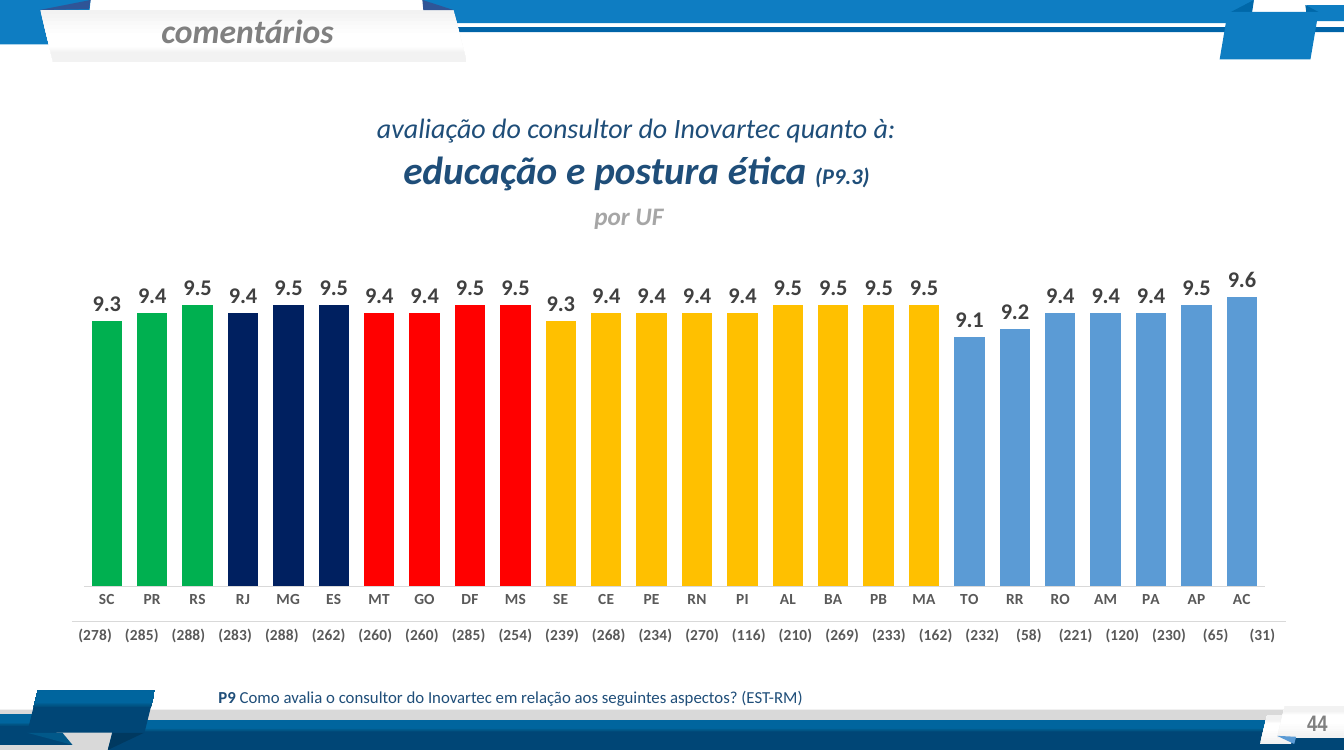
from dataclasses import dataclass

from lxml.etree import SubElement
from pptx import Presentation
from pptx.chart.chart import Chart
from pptx.chart.data import CategoryChartData
from pptx.dml.color import RGBColor
from pptx.enum.chart import XL_CHART_TYPE, XL_LABEL_POSITION, XL_TICK_MARK
from pptx.enum.shapes import MSO_SHAPE
from pptx.enum.text import MSO_ANCHOR, PP_ALIGN
from pptx.oxml import parse_xml
from pptx.oxml.ns import nsdecls, qn
from pptx.shapes.autoshape import Shape
from pptx.slide import Slide
from pptx.util import Pt

FONT = "Calibri"
SKY = RGBColor(0x0E, 0x7D, 0xC2)
STRIPE_BLUE = RGBColor(0x00, 0x64, 0xA8)
FOLD_BLUE = RGBColor(0x2F, 0x55, 0x97)
BADGE_FOLD = RGBColor(0x00, 0x68, 0xA9)
DEEP = RGBColor(0x00, 0x46, 0x76)
DEEP_MID = RGBColor(0x00, 0x55, 0x85)
DEEP_LIGHT = RGBColor(0x00, 0x65, 0x9E)
RIBBON_SHADE = RGBColor(0x00, 0x39, 0x60)
RIBBON_FOLD = RGBColor(0x01, 0x58, 0x89)
WHITE = RGBColor(0xFF, 0xFF, 0xFF)
PAPER = RGBColor(0xF2, 0xF2, 0xF2)
LIGHT_GREY = RGBColor(0xD9, 0xD9, 0xD9)
MID_GREY = RGBColor(0xA6, 0xA6, 0xA6)
GREY = RGBColor(0x80, 0x80, 0x80)
AXIS_GREY = RGBColor(0x59, 0x59, 0x59)
LABEL_GREY = RGBColor(0x40, 0x40, 0x40)
NAVY = RGBColor(0x1F, 0x4E, 0x79)
GREEN = RGBColor(0x00, 0xB0, 0x50)
INDIGO = RGBColor(0x00, 0x20, 0x60)
RED = RGBColor(0xFF, 0x00, 0x00)
AMBER = RGBColor(0xFF, 0xC0, 0x00)
LIGHT_BLUE = RGBColor(0x5B, 0x9B, 0xD5)

Stops = tuple[tuple[int, RGBColor], ...]
PAPER_SHEEN: Stops = ((0, PAPER), (50, WHITE), (68, WHITE), (83, PAPER))
DEEP_SHEEN: Stops = ((0, DEEP), (59, DEEP), (65, DEEP_MID), (72, DEEP_LIGHT))


@dataclass(frozen=True)
class Band:
    box: tuple[float, float, float, float]
    fill: RGBColor | Stops
    slant: float | None = 0.25  # None gives a rectangle
    inverted: bool = False


@dataclass(frozen=True)
class Fold:
    corners: tuple[tuple[float, float], ...]
    fill: RGBColor | Stops


@dataclass(frozen=True)
class Words:
    text: str
    size: float
    color: RGBColor
    bold: bool = False
    italic: bool = False
    font: str = FONT


@dataclass(frozen=True)
class Caption:
    box: tuple[float, float, float, float]
    words: tuple[Words, ...]
    align: PP_ALIGN = PP_ALIGN.CENTER
    line_spacing: float = 1.0


@dataclass(frozen=True)
class State:
    code: str
    score: float
    sample: int
    index: int


@dataclass(frozen=True)
class Region:
    color: RGBColor
    states: tuple[State, ...]


FRAME = (
    Fold(((317.5, 16.5), (301.7, 0), (895, 0), (892.8, 16.5)), SKY),
    Band((312.5, 19.4, 718.6, 3.6), STRIPE_BLUE, inverted=True),
    Band((-5, -1.4, 69.8, 33.1), SKY, slant=0.09),
    Band((28.8, 7.2, 304.6, 37.4), PAPER_SHEEN, inverted=True),
    Fold(((28.1, 7.2), (64.8, 0), (63.4, 6.5)), FOLD_BLUE),
    Band((-35.3, 506.9, 1011.6, 28.8), LIGHT_GREY, slant=None),
    Band((77, 514.1, 905.8, 21.6), DEEP_SHEEN),
    Fold(((51.8, 532.1), (23, 509.8), (-18, 509.8), (-13, 532.1)), DEEP_SHEEN),
    Fold(((77, 535.7), (103, 523.4), (80.6, 523.4)), RIBBON_SHADE),
    Fold(((51.8, 532.1), (19.4, 523.4), (44.6, 523.4)), RIBBON_FOLD),
    Band((19.4, 493.2, 91.4, 30.2), DEEP_SHEEN),
    Band((900, 510.5, 27.4, 20.9), PAPER_SHEEN),
    Band((912.2, 504, 54.7, 23), PAPER_SHEEN),
    Fold(((912.2, 525.6), (924.5, 531.4), (925.9, 526.3)), LIGHT_BLUE),
    Fold(((324, 7.2), (301.7, 0), (302.4, 7.2)), FOLD_BLUE),
    Fold(((894.2, 10.1), (877.7, 9.4), (895.7, 0)), BADGE_FOLD),
    Band((933.1, 3.6, 30.2, 11.5), SKY, slant=0.17, inverted=True),
    Fold(((933.1, 8.6), (941.8, 8.6), (932.4, 3.6)), BADGE_FOLD),
    Band((871.2, 8.6, 70.6, 33.8), SKY, slant=0.17),
)

CAPTIONS = (
    Caption((739.4, 501.8, 216, 28.8), (Words("44", 16, GREY, bold=True, font="Arial Narrow"),),
            PP_ALIGN.RIGHT),
    Caption((43.2, 7.9, 267.1, 30.2), (Words("comentários", 24, GREY, True, True),), line_spacing=0.9),
    Caption((149, 486, 585.4, 23), (
        Words("P9", 12, NAVY, bold=True),
        Words(" Como avalia o consultor do Inovartec em relação aos seguintes aspectos? (EST-RM)", 12, NAVY),
    ), PP_ALIGN.LEFT),
    Caption((311, 139.7, 276.5, 28.8), (Words("por UF", 18, MID_GREY, True, True),)),
    Caption((257, 74.9, 395.3, 31.7),
            (Words("avaliação do consultor do Inovartec quanto à:", 20, NAVY, italic=True),)),
    Caption((257, 100.1, 395.3, 41), (
        Words("educação e postura ética ", 28, NAVY, True, True),
        Words("(P9.3)", 16, NAVY, True, True),
    )),
)

REGIONS = (
    Region(GREEN, (State("SC", 9.3, 278, 97), State("PR", 9.4, 285, 98), State("RS", 9.5, 288, 98))),
    Region(INDIGO, (State("RJ", 9.4, 283, 98), State("MG", 9.5, 288, 99), State("ES", 9.5, 262, 99))),
    Region(RED, (State("MT", 9.4, 260, 98), State("GO", 9.4, 260, 98),
                 State("DF", 9.5, 285, 99), State("MS", 9.5, 254, 99))),
    Region(AMBER, (State("SE", 9.3, 239, 97), State("CE", 9.4, 268, 98), State("PE", 9.4, 234, 98),
                   State("RN", 9.4, 270, 98), State("PI", 9.4, 116, 98), State("AL", 9.5, 210, 98),
                   State("BA", 9.5, 269, 99), State("PB", 9.5, 233, 99), State("MA", 9.5, 162, 99))),
    Region(LIGHT_BLUE, (State("TO", 9.1, 232, 95), State("RR", 9.2, 58, 96), State("RO", 9.4, 221, 97),
                        State("AM", 9.4, 120, 98), State("PA", 9.4, 230, 98), State("AP", 9.5, 65, 99),
                        State("AC", 9.6, 31, 100))),
)
STATES = [state for region in REGIONS for state in region.states]
STATE_COLORS = [region.color for region in REGIONS for _ in region.states]


def paint(shape: Shape, fill: RGBColor | Stops) -> None:
    """Fill with one colour, or with gradient stops that run from bottom to top."""
    shape.shadow.inherit = False
    shape.line.fill.background()
    if isinstance(fill, RGBColor):
        shape.fill.solid()
        shape.fill.fore_color.rgb = fill
        return
    shape.fill.gradient()
    shape.fill.gradient_angle = 90
    stop_list = shape._element.spPr.find(qn("a:gradFill")).find(qn("a:gsLst"))
    for default_stop in list(stop_list):
        stop_list.remove(default_stop)
    for percent, color in fill:
        stop = SubElement(stop_list, qn("a:gs"), pos=str(percent * 1000))
        SubElement(stop, qn("a:srgbClr"), val=str(color))


def draw_band(slide: Slide, band: Band) -> None:
    preset = MSO_SHAPE.RECTANGLE if band.slant is None else MSO_SHAPE.PARALLELOGRAM
    shape = slide.shapes.add_shape(preset, *map(Pt, band.box))
    if band.slant is not None:
        shape.adjustments[0] = band.slant
    if band.inverted:
        shape.rotation = 180
        shape._element.spPr.find(qn("a:xfrm")).set("flipH", "1")
    paint(shape, band.fill)


def draw_fold(slide: Slide, fold: Fold) -> None:
    start, *others = [(Pt(x), Pt(y)) for x, y in fold.corners]
    builder = slide.shapes.build_freeform(*start)
    builder.add_line_segments(others, close=True)
    paint(builder.convert_to_shape(), fold.fill)


def draw_caption(slide: Slide, caption: Caption) -> None:
    frame = slide.shapes.add_textbox(*map(Pt, caption.box)).text_frame
    frame.word_wrap = True
    frame.vertical_anchor = MSO_ANCHOR.MIDDLE
    paragraph = frame.paragraphs[0]
    paragraph.alignment = caption.align
    paragraph.line_spacing = caption.line_spacing
    for words in caption.words:
        run = paragraph.add_run()
        run.text = words.text
        run.font.name, run.font.size = words.font, Pt(words.size)
        run.font.bold, run.font.italic = words.bold, words.italic
        run.font.color.rgb = words.color


def draw_columns(slide: Slide, box: tuple[float, ...], plot_box: tuple[float, ...],
                 categories: list[str], values: list[float]) -> Chart:
    """Add columns coloured by region; plot_box holds fractions of the chart."""
    data = CategoryChartData(number_format="#,##0.0")
    data.categories = categories
    data.add_series("Series 1", values)
    chart = slide.shapes.add_chart(XL_CHART_TYPE.COLUMN_CLUSTERED, *map(Pt, box), data).chart
    chart.has_legend = chart.has_title = False
    chart.font.name, chart.font.size = FONT, Pt(10)
    chart.value_axis.has_major_gridlines = False
    chart.value_axis.visible = False
    axis = chart.category_axis
    axis.major_tick_mark = axis.minor_tick_mark = XL_TICK_MARK.NONE
    axis.format.line.color.rgb, axis.format.line.width = LIGHT_GREY, Pt(0.75)
    font = axis.tick_labels.font
    font.name, font.size, font.bold = FONT, Pt(11), True
    font.color.rgb = AXIS_GREY
    plot = chart.plots[0]
    plot.gap_width, plot.overlap, plot.vary_by_categories = 49, -27, False
    series = plot.series[0]
    series.invert_if_negative = False
    for position, color in enumerate(STATE_COLORS):
        fill = series.points[position].format.fill
        fill.solid()
        fill.fore_color.rgb = color
    plot_area = chart._chartSpace.chart.plotArea
    for automatic in plot_area.findall(qn("c:layout")):
        plot_area.remove(automatic)
    sizes = "".join(f'<c:{key} val="{value}"/>' for key, value in zip("xywh", plot_box))
    plot_area.insert(0, parse_xml(
        f'<c:layout {nsdecls("c")}><c:manualLayout><c:layoutTarget val="inner"/>'
        f'<c:xMode val="edge"/><c:yMode val="edge"/>{sizes}</c:manualLayout></c:layout>'))
    return chart


def draw_scores(slide: Slide) -> None:
    chart = draw_columns(slide, (42.5, 184.3, 878.4, 254.9), (0.02, 0.02, 0.96, 0.9),
                         [state.code for state in STATES], [state.score for state in STATES])
    chart.value_axis.minimum_scale, chart.value_axis.maximum_scale = 6, 10
    plot = chart.plots[0]
    plot.has_data_labels = True
    labels = plot.data_labels
    labels.show_value = True
    labels.number_format, labels.number_format_is_linked = "#,##0.0", False
    labels.position = XL_LABEL_POSITION.OUTSIDE_END
    labels.font.name, labels.font.size, labels.font.bold = FONT, Pt(16), True
    labels.font.color.rgb = LABEL_GREY


def draw_samples(slide: Slide) -> None:
    """Show the sample sizes as axis labels; the scale ends at zero, so no column rises."""
    chart = draw_columns(slide, (42.5, 391, 884.9, 77.8), (0.01, 0.68, 0.98, 0.23),
                         [f"({state.sample})" for state in STATES], [state.index for state in STATES])
    chart.value_axis.maximum_scale = 0


def main() -> None:
    presentation = Presentation()
    presentation.slide_width, presentation.slide_height = Pt(960), Pt(540)
    slide = presentation.slides.add_slide(presentation.slide_layouts[6])
    for part in FRAME:
        if isinstance(part, Band):
            draw_band(slide, part)
        else:
            draw_fold(slide, part)
    draw_scores(slide)
    draw_samples(slide)
    for caption in CAPTIONS:
        draw_caption(slide, caption)
    presentation.save("out.pptx")


if __name__ == "__main__":
    main()
